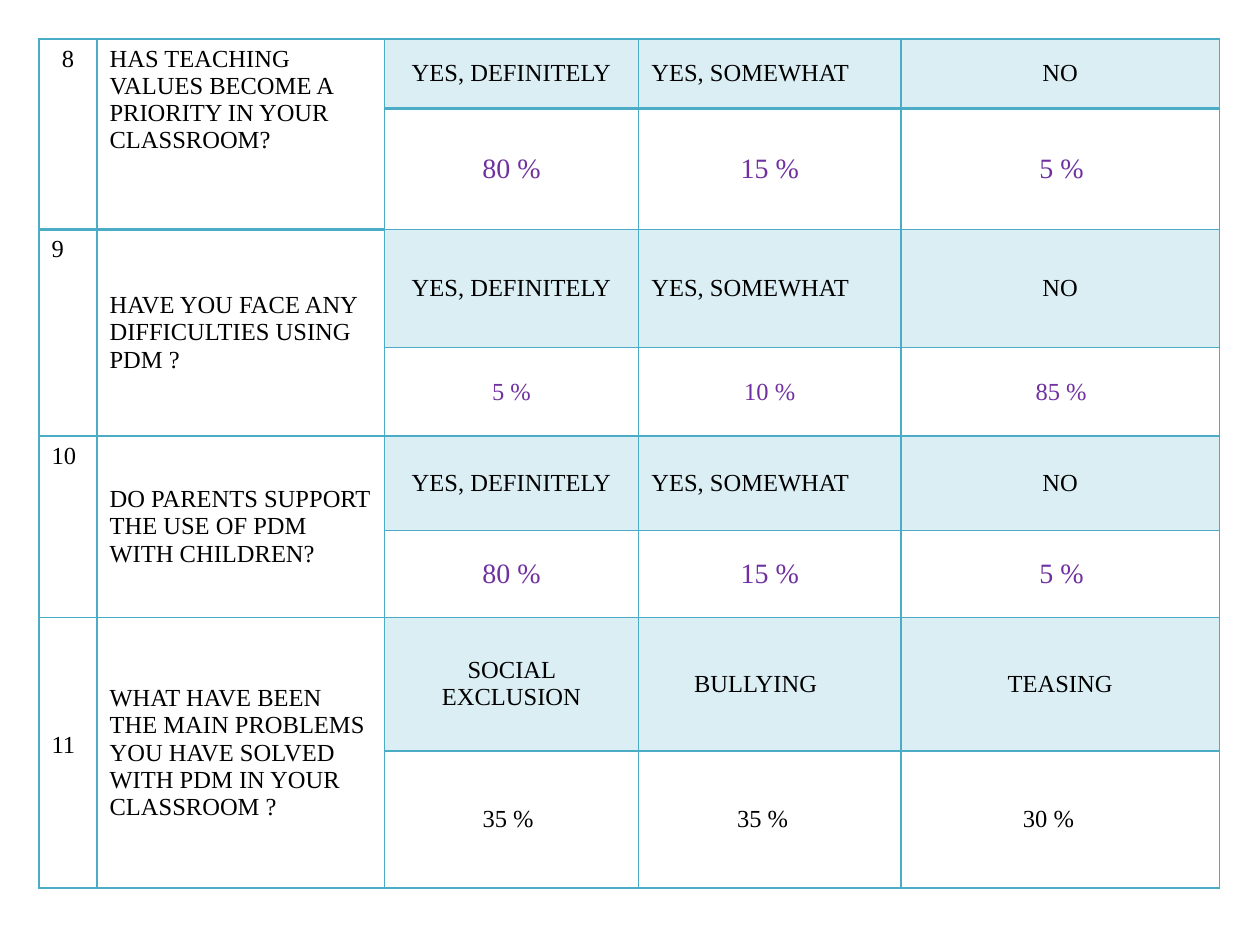
from dataclasses import dataclass

import pptx
import pptx.dml.color
import pptx.enum.text
import pptx.oxml
import pptx.oxml.ns
import pptx.util

Inches = pptx.util.Inches
ALIGN = pptx.enum.text.PP_ALIGN
ANCHOR = pptx.enum.text.MSO_ANCHOR


@dataclass(frozen=True)
class Theme:
    font: str = "Times New Roman"
    ink: str = "000000"
    share: str = "7030A0"
    border: str = "4BACC6"
    heading_fill: str = "DBEEF4"
    body_size: int = 14
    large_size: int = 16
    thin: int = 1
    thick: int = 2
    inset: float = 0.1


@dataclass(frozen=True)
class Entry:
    text: str
    indent: float | None = None


@dataclass(frozen=True)
class Question:
    number: Entry
    wording: str
    answers: tuple
    shares: tuple
    share_size: int
    share_color: str
    wording_anchor: ANCHOR = ANCHOR.MIDDLE
    number_top: float = 0.05
    rule_weight: int = 1


THEME = Theme()
COLUMNS = [0.46, 2.28, 2.02, 2.08, 2.53]
ROWS = [0.55, 0.96, 0.94, 0.7, 0.75, 0.69, 1.06, 1.09]
LEFT = TOP = 0.31
YES_NO = (Entry("YES, DEFINITELY"), Entry("YES, SOMEWHAT", 0), Entry("NO"))

QUESTIONS = [
    Question(Entry("8"), "HAS TEACHING VALUES BECOME A PRIORITY IN YOUR CLASSROOM?",
             YES_NO, (Entry("80 %"), Entry("15 %"), Entry("5 %", 1.0)),
             THEME.large_size, THEME.share,
             wording_anchor=ANCHOR.TOP, rule_weight=THEME.thick),
    Question(Entry("9", 0), "HAVE YOU FACE ANY DIFFICULTIES USING PDM ?",
             YES_NO, (Entry("5 %"), Entry("10 %"), Entry("85 %", 0.97)),
             THEME.body_size, THEME.share),
    Question(Entry("10", 0), "DO PARENTS SUPPORT THE USE OF PDM WITH CHILDREN?",
             YES_NO, (Entry("80 %"), Entry("15 %"), Entry("5 %", 1.0)),
             THEME.large_size, THEME.share),
    Question(Entry("11", 0),
             "WHAT HAVE BEEN THE MAIN PROBLEMS YOU HAVE SOLVED WITH PDM IN YOUR CLASSROOM ?",
             (Entry("SOCIAL EXCLUSION"), Entry("BULLYING", 0.34), Entry("TEASING")),
             (Entry("35 %", 0.68), Entry("35 %", 0.68), Entry("30 %", 0.87)),
             THEME.body_size, THEME.ink, number_top=0.91),
]


def apply(target, values):
    for name, value in values.items():
        setattr(target, name, value)


def draw_borders(cell, bottom_weight=THEME.thin):
    properties = cell._tc.get_or_add_tcPr()
    weights = {"L": THEME.thin, "R": THEME.thin, "T": THEME.thin, "B": bottom_weight}
    for side, weight in weights.items():
        properties.append(pptx.oxml.parse_xml(
            f'<a:ln{side} {pptx.oxml.ns.nsdecls("a")} w="{pptx.util.Pt(weight)}">'
            f'<a:solidFill><a:srgbClr val="{THEME.border}"/></a:solidFill>'
            f'</a:ln{side}>'))


def paint(cell, color=None):
    if color is None:
        cell.fill.background()
    else:
        cell.fill.solid()
        cell.fill.fore_color.rgb = pptx.dml.color.RGBColor.from_string(color)


def write(cell, entry, size=THEME.body_size, color=THEME.ink,
          anchor=ANCHOR.MIDDLE, top=0.05):
    apply(cell, {
        "text": entry.text,
        "vertical_anchor": anchor,
        "margin_left": Inches(THEME.inset + (entry.indent or 0)),
        "margin_top": Inches(top),
    })
    paragraph = cell.text_frame.paragraphs[0]
    paragraph.alignment = ALIGN.CENTER if entry.indent is None else ALIGN.LEFT
    font = paragraph.runs[0].font
    apply(font, {"name": THEME.font, "size": pptx.util.Pt(size)})
    font.color.rgb = pptx.dml.color.RGBColor.from_string(color)


def add_survey_grid(slide):
    frame = slide.shapes.add_table(
        len(ROWS), len(COLUMNS), Inches(LEFT), Inches(TOP),
        Inches(sum(COLUMNS)), Inches(sum(ROWS)))
    grid = frame.table
    apply(grid, {"first_row": False, "horz_banding": False})
    for column, width in zip(grid.columns, COLUMNS):
        column.width = Inches(width)
    for row, height in zip(grid.rows, ROWS):
        row.height = Inches(height)
    return grid


def fill_question(grid, row, question):
    for column in range(len(COLUMNS)):
        heading, result = grid.cell(row, column), grid.cell(row + 1, column)
        spans = column < 2
        draw_borders(heading, question.rule_weight)
        draw_borders(result, question.rule_weight if spans else THEME.thin)
        paint(heading, None if spans else THEME.heading_fill)
        paint(result)
        if spans:
            heading.merge(result)
    write(grid.cell(row, 0), question.number, anchor=ANCHOR.TOP, top=question.number_top)
    write(grid.cell(row, 1), Entry(question.wording, 0), anchor=question.wording_anchor)
    for column, (answer, share) in enumerate(zip(question.answers, question.shares), 2):
        write(grid.cell(row, column), answer)
        write(grid.cell(row + 1, column), share, question.share_size, question.share_color)


def main():
    presentation = pptx.Presentation()
    apply(presentation, {"slide_width": Inches(10), "slide_height": Inches(7.5)})
    slide = presentation.slides.add_slide(presentation.slide_layouts[6])
    grid = add_survey_grid(slide)
    for index, question in enumerate(QUESTIONS):
        fill_question(grid, index * 2, question)
    presentation.save("out.pptx")


if __name__ == "__main__":
    main()
